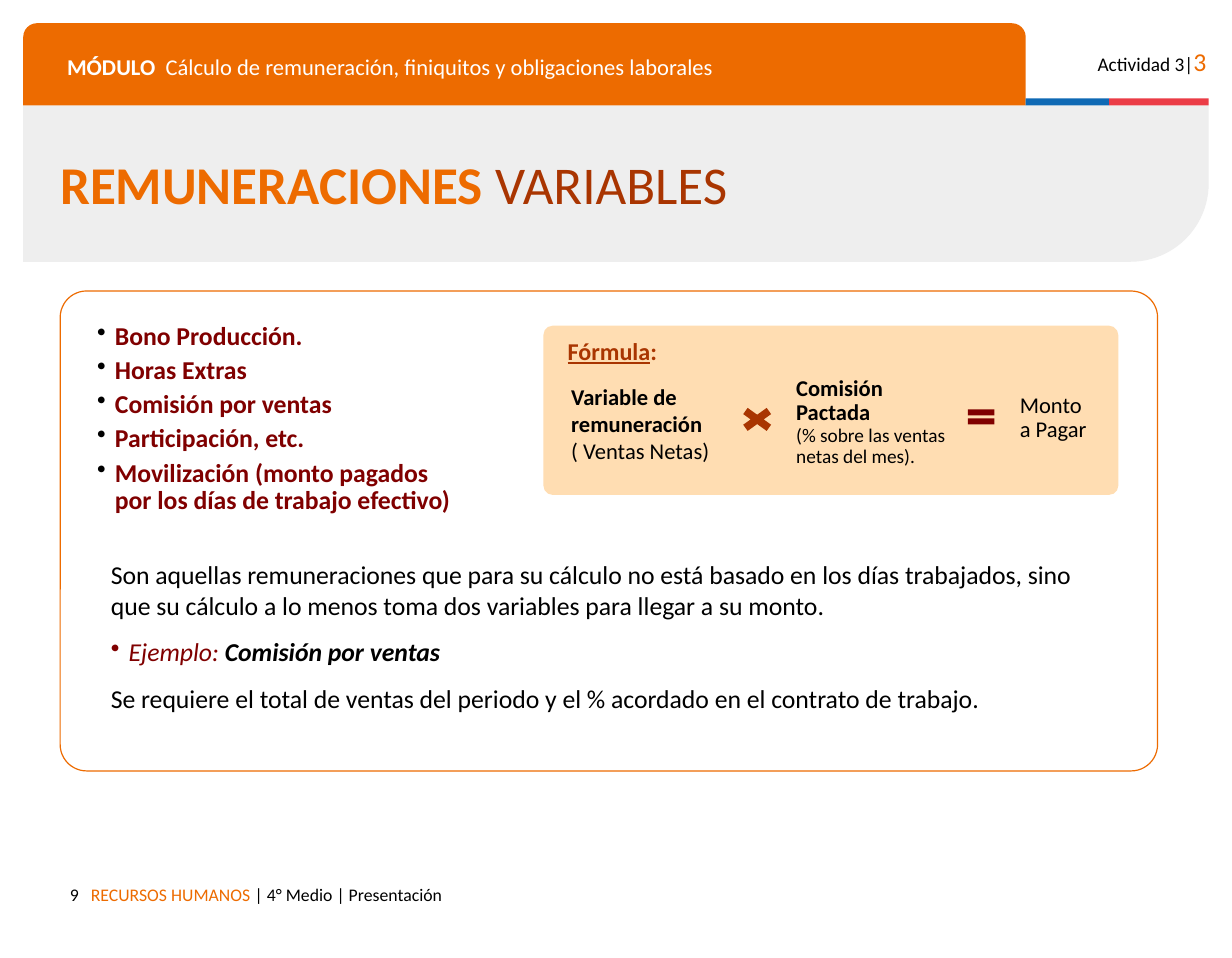
from lxml import etree
from pptx import Presentation
from pptx.dml.color import RGBColor
from pptx.enum.shapes import MSO_SHAPE
from pptx.enum.text import PP_ALIGN
from pptx.oxml.ns import qn
from pptx.util import Cm, Pt

ROUND_RECT = MSO_SHAPE.ROUNDED_RECTANGLE
ROUND_ONE = MSO_SHAPE.ROUND_1_RECTANGLE
ROUND_TOP = MSO_SHAPE.ROUND_2_SAME_RECTANGLE
RECT = MSO_SHAPE.RECTANGLE
TIMES = MSO_SHAPE.MATH_MULTIPLY
EQUALS = MSO_SHAPE.MATH_EQUAL
LEFT, RIGHT = PP_ALIGN.LEFT, PP_ALIGN.RIGHT

ORANGE = RGBColor(0xED, 0x6B, 0x00)
RUST = RGBColor(0xA9, 0x35, 0x01)
MAROON = RGBColor(0x80, 0x00, 0x00)
PEACH = RGBColor(0xFF, 0xDD, 0xB2)
GRAY = RGBColor(0xEE, 0xEE, 0xEE)
BLUE = RGBColor(0x0F, 0x69, 0xB4)
RED = RGBColor(0xEB, 0x3C, 0x46)
BLACK = RGBColor(0x00, 0x00, 0x00)
WHITE = RGBColor(0xFF, 0xFF, 0xFF)

FONT = "Calibri"
MASTER_INSET = 0.25


def within(box, dx, dy, w, h):
    """Return a box of the given size, offset from the corner of another box."""
    return box[0] + dx, box[1] + dy, w, h


def add_shape(slide, kind, box, fill, line=None, adj=()):
    sp = slide.shapes.add_shape(kind, *map(Cm, box))
    sp.shadow.inherit = False
    sp.fill.solid()
    sp.fill.fore_color.rgb = fill
    if line is None:
        sp.line.fill.background()
    else:
        sp.line.color.rgb = line
        sp.line.width = Pt(0.75)
    for i, value in enumerate(adj):
        sp.adjustments[i] = value
    return sp


def add_text(slide, box, paragraphs, *, size, color=BLACK, bold=False, align=LEFT,
             spacing=1.0, before=0, after=0, inset=0.13):
    """Each paragraph is a list of (text, format overrides) runs."""
    tf = slide.shapes.add_textbox(*map(Cm, box)).text_frame
    tf.word_wrap = True
    tf.margin_top = tf.margin_bottom = Cm(inset)
    for i, runs in enumerate(paragraphs):
        p = tf.paragraphs[0] if i == 0 else tf.add_paragraph()
        p.alignment = align
        p.line_spacing = spacing
        p.space_before = Pt(before if i else 0)
        p.space_after = Pt(after)
        for content, fmt in runs:
            r = p.add_run()
            r.text = content
            r.font.name = FONT
            r.font.size = Pt(fmt.get("size", size))
            r.font.color.rgb = fmt.get("color", color)
            r.font.bold = fmt.get("bold", bold)
            r.font.italic = fmt.get("italic", False)
            r.font.underline = fmt.get("underline", False)
    return tf


def add_bullet(p, color):
    pPr = p._p.get_or_add_pPr()
    pPr.set("marL", str(Cm(0.39)))
    pPr.set("indent", str(-Cm(0.39)))
    clr = etree.SubElement(pPr, qn("a:buClr"))
    etree.SubElement(clr, qn("a:srgbClr")).set("val", str(color))
    etree.SubElement(pPr, qn("a:buChar")).set("char", "•")


def header(slide, box):
    band = add_shape(slide, ROUND_ONE, within(box, 0, 1.8, box[2], 3.43), GRAY, adj=[0.5])
    band._element.spPr.get_or_add_xfrm().set("flipV", "1")
    add_shape(slide, ROUND_TOP, within(box, 0, 0, 21.97, 1.8), ORANGE, adj=[0.167, 0])
    add_shape(slide, RECT, within(box, 21.97, 1.65, 1.83, 0.15), BLUE)
    add_shape(slide, RECT, within(box, 23.8, 1.65, 2.18, 0.15), RED)
    add_text(slide, within(box, 22.93, 0.25, 3.25, 0.97),
             [[("Actividad 3|", {}), ("3", {"size": 16, "color": ORANGE})]],
             size=12, align=RIGHT, inset=MASTER_INSET)
    add_text(slide, within(box, 0.71, 0.46, 2.6, 0.89), [[("MÓDULO", {})]],
             size=14, color=WHITE, bold=True, spacing=0.9, inset=MASTER_INSET)
    add_text(slide, within(box, 2.87, 0.46, 18.5, 0.89),
             [[("Cálculo de remuneración, finiquitos y obligaciones laborales", {})]],
             size=14, color=WHITE, spacing=0.9, inset=MASTER_INSET)
    add_text(slide, within(box, 0.56, 3.07, 25.93, 1.32),
             [[("REMUNERACIONES ", {"bold": True}), ("VARIABLES", {"color": RUST})]],
             size=33, color=ORANGE, spacing=0.7)


def formula(slide, box):
    add_shape(slide, ROUND_RECT, box, PEACH, adj=[0.055])
    add_text(slide, within(box, 0.28, 0.1, 9.25, 0.89),
             [[("Fórmula", {"underline": True}), (":", {})]],
             size=15, color=RUST, bold=True)
    add_text(slide, within(box, 0.36, 1.12, 3.63, 2.06),
             [[("Variable de", {"bold": True})], [("remuneración", {"bold": True})],
              [("( Ventas Netas)", {})]], size=14)
    add_shape(slide, TIMES, within(box, 4.19, 1.7, 0.99, 0.71), RUST, adj=[0.235])
    add_text(slide, within(box, 5.29, 0.99, 3.89, 2.26),
             [[("Comisión Pactada", {"bold": True})],
              [("(% sobre las ventas netas del mes).", {"size": 12})]],
             size=14, spacing=0.9)
    add_shape(slide, EQUALS, within(box, 9.2, 1.72, 0.79, 0.56), MAROON, adj=[0.235, 0.118])
    add_text(slide, within(box, 10.19, 1.37, 3.66, 1.35),
             [[("Monto", {})], [("a Pagar", {})]], size=14, spacing=0.9)


def content_card(slide, box):
    add_shape(slide, ROUND_RECT, box, WHITE, line=ORANGE, adj=[0.055])
    items = ["Bono Producción.", "Horas Extras", "Comisión por ventas", "Participación, etc.",
             "Movilización (monto pagados por los días de trabajo efectivo)"]
    tf = add_text(slide, within(box, 0.56, 0.57, 8.56, 5.2), [[(item, {})] for item in items],
                  size=16, color=MAROON, bold=True, spacing=0.9, after=4)
    for p in tf.paragraphs:
        add_bullet(p, BLACK)
    formula(slide, within(box, 10.59, 0.76, 12.6, 3.71))
    tf = add_text(slide, within(box, 0.86, 5.74, 21.69, 3.7), [
        [("Son aquellas remuneraciones que para su cálculo no está basado en los días "
          "trabajados, sino que su cálculo a lo menos toma dos variables para llegar "
          "a su monto.", {})],
        [("Ejemplo: ", {"color": MAROON, "italic": True}),
         ("Comisión por ventas", {"bold": True, "italic": True})],
        [("Se requiere el total de ventas del periodo y el % acordado en el contrato "
          "de trabajo.", {})],
    ], size=16, before=9.7)
    add_bullet(tf.paragraphs[1], MAROON)


def footer(slide, box):
    add_text(slide, within(box, 0, 0, 1.47, 0.74), [[("9", {})]],
             size=11, align=RIGHT, inset=MASTER_INSET)
    add_text(slide, within(box, 1.23, 0, 17, 0.97),
             [[("RECURSOS HUMANOS ", {"color": ORANGE}), ("| 4° Medio | Presentación", {})]],
             size=11, inset=MASTER_INSET)


def main():
    prs = Presentation()
    prs.slide_width, prs.slide_height = Cm(27), Cm(21)
    s = prs.slides.add_slide(prs.slide_layouts[6])
    header(s, (0.51, 0.51, 25.98, 5.23))
    content_card(s, (1.32, 6.38, 24.05, 10.52))
    footer(s, (0.51, 19.13, 19.37, 0.97))
    prs.save("out.pptx")


if __name__ == "__main__":
    main()
